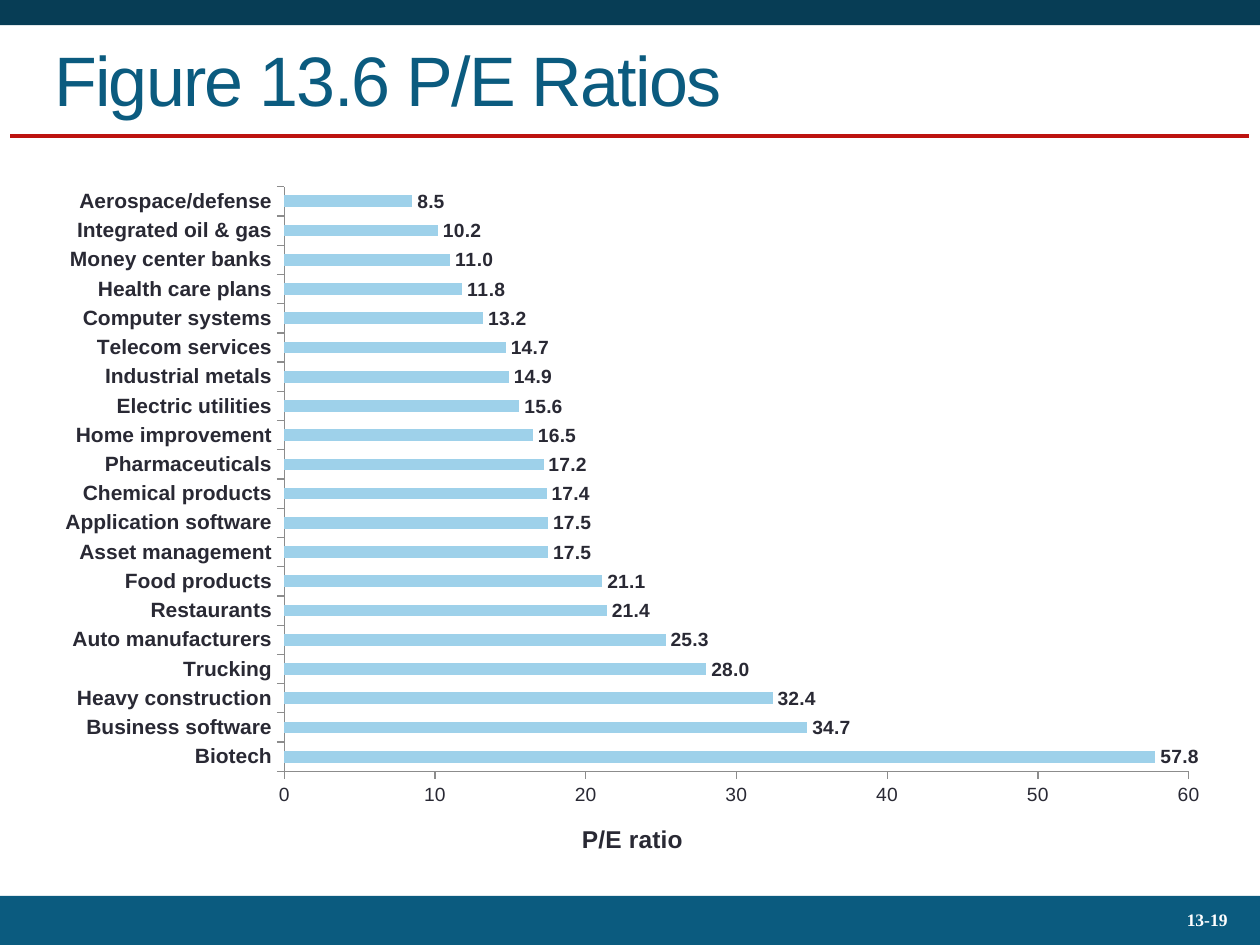
from lxml import etree
from pptx import Presentation
from pptx.chart.data import CategoryChartData
from pptx.dml.color import RGBColor
from pptx.enum.chart import XL_CHART_TYPE, XL_LABEL_POSITION, XL_TICK_MARK
from pptx.enum.shapes import MSO_CONNECTOR, MSO_SHAPE
from pptx.enum.text import MSO_ANCHOR, PP_ALIGN
from pptx.oxml import parse_xml
from pptx.oxml.ns import nsdecls, qn
from pptx.util import Inches, Pt

NAVY = RGBColor(0x07, 0x3D, 0x55)
TEAL = RGBColor(0x0B, 0x5B, 0x7F)
RED = RGBColor(0xBD, 0x13, 0x0F)
WHITE = RGBColor(0xFF, 0xFF, 0xFF)
INK = RGBColor(0x29, 0x29, 0x34)
SKY = RGBColor(0x9E, 0xD1, 0xEA)
GRAY = RGBColor(0x8C, 0x8C, 0x8C)

PE_RATIOS = {
    "Biotech": 57.8, "Business software": 34.7, "Heavy construction": 32.4,
    "Trucking": 28.0, "Auto manufacturers": 25.3, "Restaurants": 21.4,
    "Food products": 21.1, "Asset management": 17.5,
    "Application software": 17.5, "Chemical products": 17.4,
    "Pharmaceuticals": 17.2, "Home improvement": 16.5,
    "Electric utilities": 15.6, "Industrial metals": 14.9,
    "Telecom services": 14.7, "Computer systems": 13.2,
    "Health care plans": 11.8, "Money center banks": 11.0,
    "Integrated oil & gas": 10.2, "Aerospace/defense": 8.5,
}


def set_font(font, color, **values):
    for name, value in values.items():
        setattr(font, name, value)
    font.color.rgb = color


def fill_text(tf, text, color, align, **font):
    margins = {"margin_left": 0.1, "margin_right": 0.1,
               "margin_top": 0.05, "margin_bottom": 0.05}
    for name, value in margins.items():
        setattr(tf, name, Inches(value))
    tf.word_wrap = True
    tf.vertical_anchor = MSO_ANCHOR.MIDDLE
    p = tf.paragraphs[0]
    p.alignment = align
    r = p.add_run()
    r.text = text
    set_font(r.font, color, **font)
    return r


def add_band(s, box, color):
    sp = s.shapes.add_shape(MSO_SHAPE.RECTANGLE, *map(Inches, box))
    sp.shadow.inherit = False
    sp.fill.solid()
    sp.fill.fore_color.rgb = color
    sp.line.fill.background()


def add_rule(s, left, right, y):
    line = s.shapes.add_connector(MSO_CONNECTOR.STRAIGHT, Inches(left),
                                  Inches(y), Inches(right), Inches(y))
    line.line.color.rgb = RED
    line.line.width = Pt(2.25)
    etree.SubElement(line._element.spPr, qn("a:effectLst"))


def add_page_number(s, box, text):
    sp = s.shapes.add_textbox(*map(Inches, box))
    r = fill_text(sp.text_frame, text, WHITE, PP_ALIGN.RIGHT,
                  name="Times New Roman", size=Pt(10), bold=True)
    sp.text_frame.paragraphs[0].line_spacing = 0.93
    return r


def place_title(s, box, text):
    title = s.shapes.title
    title.left, title.top, title.width, title.height = map(Inches, box)
    r = fill_text(title.text_frame, text, TEAL, PP_ALIGN.LEFT,
                  name="Arial", size=Pt(40))
    r.font._element.set("spc", "-100")


def manual_layout(x, y, w=None, h=None):
    """Chart layout in fractions of the chart; an inner plot if sized."""
    parts = {"layoutTarget": "inner" if w else None,
             "xMode": "edge", "yMode": "edge", "x": x, "y": y, "w": w, "h": h}
    tags = "".join(f'<c:{tag} val="{val}"/>'
                   for tag, val in parts.items() if val is not None)
    return parse_xml(f'<c:layout {nsdecls("c")}><c:manualLayout>{tags}'
                     '</c:manualLayout></c:layout>')


def replace_layout(parent, layout, index):
    for old in parent.findall(qn("c:layout")):
        parent.remove(old)
    parent.insert(index, layout)


def format_axis(axis, size, bold):
    axis.has_major_gridlines = False
    axis.major_tick_mark = XL_TICK_MARK.OUTSIDE
    axis.minor_tick_mark = XL_TICK_MARK.NONE
    axis.format.line.color.rgb = GRAY
    axis.format.line.width = Pt(0.75)
    set_font(axis.tick_labels.font, INK, name="Arial", size=Pt(size), bold=bold)


def add_ratio_chart(s, box):
    data = CategoryChartData()
    data.categories = list(PE_RATIOS)
    data.add_series("Series 1", list(PE_RATIOS.values()))
    chart = s.shapes.add_chart(XL_CHART_TYPE.BAR_CLUSTERED,
                               *map(Inches, box), data).chart
    chart.has_legend = chart.has_title = False
    set_font(chart.font, INK, name="Arial", size=Pt(11), bold=True)

    format_axis(chart.category_axis, 12, True)
    axis = chart.value_axis
    format_axis(axis, 11, False)
    axis.minimum_scale, axis.maximum_scale, axis.major_unit = 0, 60, 10
    axis.tick_labels.number_format = "0"
    axis.tick_labels.number_format_is_linked = False
    r = axis.axis_title.text_frame.paragraphs[0].add_run()
    r.text = "P/E ratio"
    set_font(r.font, INK, name="Arial", size=Pt(14), bold=True)
    replace_layout(axis.axis_title._element, manual_layout(0.46, 0.95), 1)

    plot = chart.plots[0]
    plot.gap_width = 150
    plot.vary_by_categories = False
    fill = plot.series[0].format.fill
    fill.solid()
    fill.fore_color.rgb = SKY
    plot.has_data_labels = True
    labels = plot.data_labels
    values = {"show_value": True, "number_format": "0.0",
              "number_format_is_linked": False,
              "position": XL_LABEL_POSITION.OUTSIDE_END}
    for name, value in values.items():
        setattr(labels, name, value)
    set_font(labels.font, INK, name="Arial", size=Pt(11), bold=True)
    plot_area = chart._chartSpace.chart.plotArea
    replace_layout(plot_area, manual_layout(0.213, 0.028, 0.762, 0.853), 0)


def main():
    prs = Presentation()
    prs.slide_width, prs.slide_height = Inches(10), Inches(7.5)
    s = prs.slides.add_slide(prs.slide_layouts[5])
    add_band(s, (0, 0, 10, 0.2), NAVY)
    add_rule(s, 0.08, 9.91, 1.08)
    add_band(s, (0, 7.11, 10, 0.39), TEAL)
    add_page_number(s, (8.67, 7.13, 1.17, 0.36), "13-19")
    place_title(s, (0.33, 0.17, 9.35, 0.91), "Figure 13.6 P/E Ratios")
    add_ratio_chart(s, (0.25, 1.33, 9.42, 5.5))
    prs.save("out.pptx")


if __name__ == "__main__":
    main()
